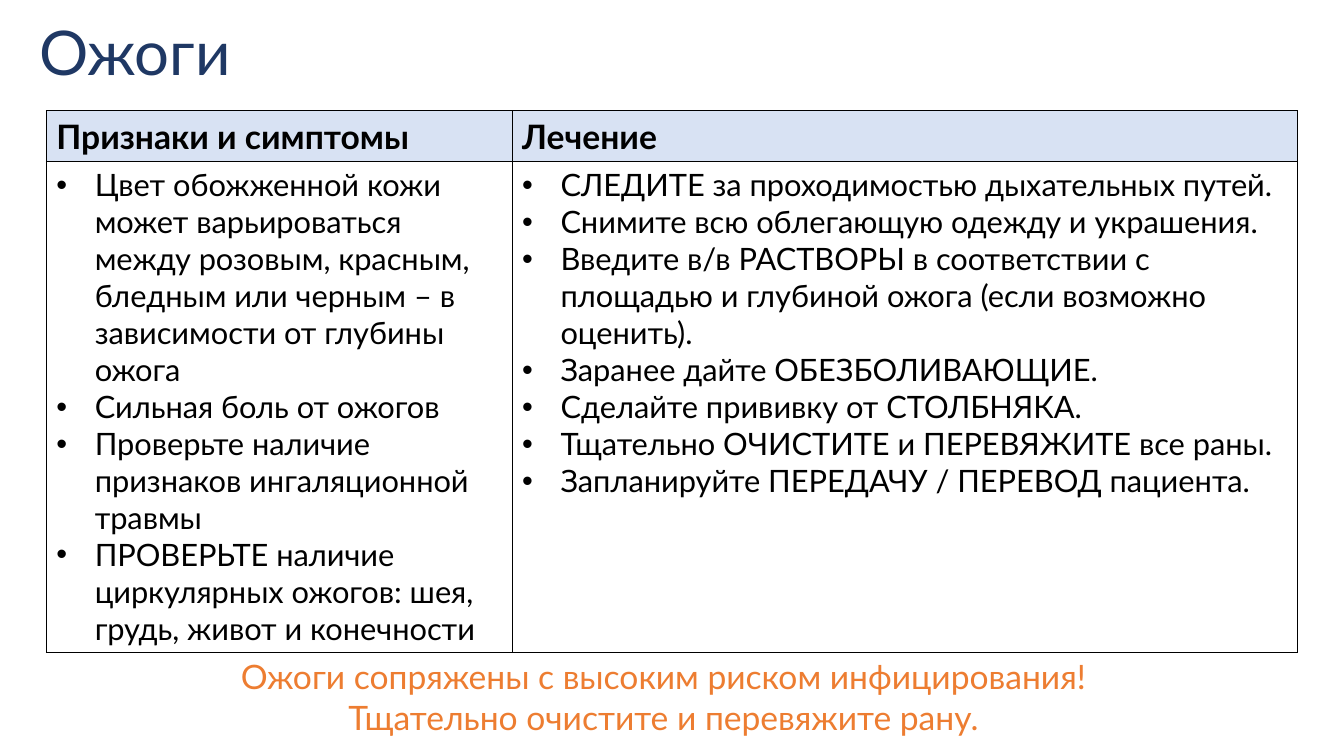
from lxml import etree
from pptx import Presentation
from pptx.dml.color import RGBColor
from pptx.enum.text import MSO_ANCHOR, PP_ALIGN
from pptx.oxml.ns import qn
from pptx.util import Inches, Pt

LEFT, CENTER = PP_ALIGN.LEFT, PP_ALIGN.CENTER
TOP, MIDDLE = MSO_ANCHOR.TOP, MSO_ANCHOR.MIDDLE

FONT = "Lato"
BLACK, NAVY, ORANGE, PALE = "000000", "1F3864", "ED7D31", "D8E2F3"

TITLE = "Ожоги"
HEADS = ["Признаки и симптомы", "Лечение"]
SIGNS = [
    "Цвет обожженной кожи может варьироваться между розовым, красным, "
    "бледным или черным – в зависимости от глубины ожога",
    "Сильная боль от ожогов",
    "Проверьте наличие признаков ингаляционной травмы",
    "ПРОВЕРЬТЕ наличие циркулярных ожогов: шея, грудь, живот и конечности",
]
CARE = [
    "СЛЕДИТЕ за проходимостью дыхательных путей.",
    "Снимите всю облегающую одежду и украшения.",
    "Введите в/в РАСТВОРЫ в соответствии с площадью и глубиной ожога "
    "(если возможно оценить).",
    "Заранее дайте ОБЕЗБОЛИВАЮЩИЕ.",
    "Сделайте прививку от СТОЛБНЯКА.",
    "Тщательно ОЧИСТИТЕ и ПЕРЕВЯЖИТЕ все раны.",
    "Запланируйте ПЕРЕДАЧУ / ПЕРЕВОД пациента.",
]
WARNING = [
    "Ожоги сопряжены с высоким риском инфицирования!",
    "Тщательно очистите и перевяжите рану.",
]

TITLE_BOX = (0.29, 0.1, 11.5, 0.91)
TABLE_BOX = (0.46, 1.1, 12.41, 5.37)
WARNING_BOX = (0.29, 6.46, 12.58, 0.91)
COLS = [4.62, 7.79]
ROWS = [0.5, 4.87]
INDENT = 0.38


def rgb(color):
    return RGBColor.from_string(color)


def place(box):
    return [Inches(n) for n in box]


def add_bullet(para):
    props = para._p.get_or_add_pPr()
    props.set("marL", str(Inches(INDENT)))
    props.set("indent", str(-Inches(INDENT)))
    tint = etree.SubElement(props, qn("a:buClr"))
    etree.SubElement(tint, qn("a:srgbClr"), val=BLACK)
    etree.SubElement(props, qn("a:buFont"), typeface="Arial")
    etree.SubElement(props, qn("a:buChar"), char="•")


def write(frame, lines, size, color=BLACK, bold=False, align=LEFT,
          anchor=TOP, bullet=False, spacing=None):
    frame.word_wrap = True
    frame.vertical_anchor = anchor
    for i, line in enumerate(lines):
        para = frame.add_paragraph() if i else frame.paragraphs[0]
        para.alignment = align
        if spacing:
            para.line_spacing = spacing
        if bullet:
            add_bullet(para)
        run = para.add_run()
        run.text = line
        font = run.font
        font.name, font.size, font.bold = FONT, Pt(size), bold
        font.color.rgb = rgb(color)


def add_border(cell):
    props = cell._tc.get_or_add_tcPr()
    for side in ("lnL", "lnR", "lnT", "lnB"):
        line = etree.SubElement(props, qn("a:" + side), w=str(Pt(1)))
        fill = etree.SubElement(line, qn("a:solidFill"))
        etree.SubElement(fill, qn("a:srgbClr"), val=BLACK)


def add_grid(slide):
    grid = slide.shapes.add_table(len(ROWS), len(COLS), *place(TABLE_BOX)).table
    for col, width in zip(grid.columns, COLS):
        col.width = Inches(width)
    for row, height in zip(grid.rows, ROWS):
        row.height = Inches(height)
    for cell in grid.iter_cells():
        add_border(cell)
        cell.fill.background()
    for i, (head, items) in enumerate(zip(HEADS, (SIGNS, CARE))):
        top, body = grid.cell(0, i), grid.cell(1, i)
        top.fill.solid()
        top.fill.fore_color.rgb = rgb(PALE)
        write(top.text_frame, [head], 24, bold=True)
        write(body.text_frame, items, 22, bullet=True)


def main():
    deck = Presentation()
    deck.slide_width, deck.slide_height = Inches(13.33), Inches(7.5)
    slide = deck.slides.add_slide(deck.slide_layouts[5])

    title = slide.shapes.title
    title.left, title.top, title.width, title.height = place(TITLE_BOX)
    write(title.text_frame, [TITLE], 44, color=NAVY, anchor=MIDDLE, spacing=0.9)

    add_grid(slide)

    note = slide.shapes.add_textbox(*place(WARNING_BOX))
    write(note.text_frame, WARNING, 24, color=ORANGE, align=CENTER)

    deck.save("out.pptx")


if __name__ == "__main__":
    main()
